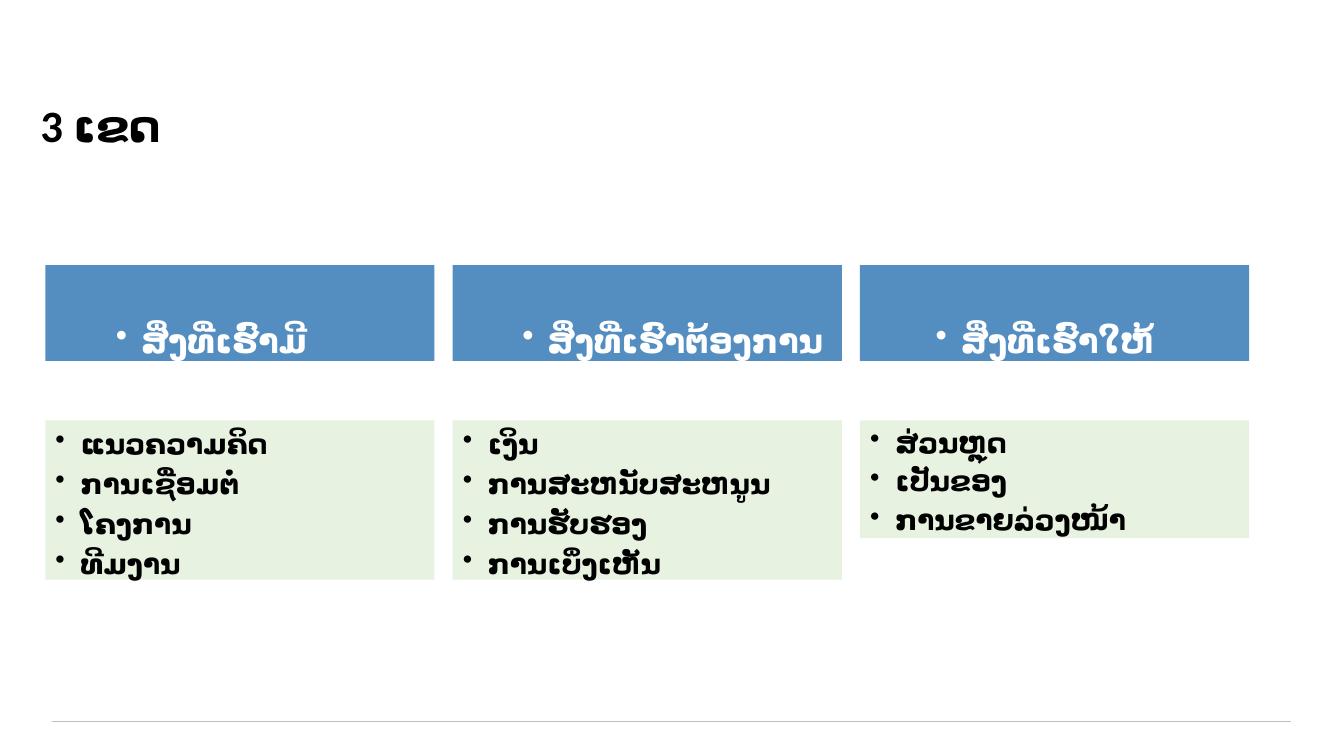
from lxml import etree
from pptx import Presentation, util as u
from pptx.dml.color import RGBColor
from pptx.enum import shapes, text
from pptx.oxml.ns import qn


def paint(fmt, colour):
    """Apply a hex colour to a fill, or to the fill of a line or font."""
    fill = getattr(fmt, "fill", fmt)
    fill.solid()
    fill.fore_color.rgb = RGBColor.from_string(colour)


def write(frame, lines, size=20, colour="000000", font="Calibri", indent=0.01,
          hanging=0, gap=0, inset=0, tracking=0, bullet=None):
    """Fill a text frame with one paragraph for each line."""
    frame.word_wrap = True
    frame.auto_size = text.MSO_AUTO_SIZE.NONE
    frame.vertical_anchor = text.MSO_ANCHOR.TOP
    frame.margin_left = frame.margin_right = frame.margin_bottom = 0
    frame.margin_top = u.Inches(inset)
    for i, line in enumerate(lines):
        para = frame.paragraphs[0] if i == 0 else frame.add_paragraph()
        para.alignment = text.PP_ALIGN.LEFT
        props = para._p.get_or_add_pPr()
        props.set("marL", str(u.Inches(indent)))
        props.set("indent", str(u.Inches(-hanging)))
        if bullet:
            etree.SubElement(props, qn("a:buChar"), char=bullet)
        para.space_before = u.Pt(gap if i else 0)
        run = para.add_run()
        run.text = line
        run.font.name, run.font.size, run.font.bold = font, u.Pt(size), True
        paint(run.font, colour)
        run_props = run._r.get_or_add_rPr()
        run_props.set("spc", str(round(tracking * 100)))
        etree.SubElement(run_props, qn("a:cs"), typeface=font)


class ZoneSlide:
    LEFT, COLUMN, GUTTER = 0.45, 3.86, 0.18
    HEADING, LIST, RULE = "548EC1", "E7F2E0", "BFBFBF"

    def __init__(self, deck):
        self.slide = deck.slides.add_slide(deck.slide_layouts[6])

    def column_left(self, column):
        return self.LEFT + column * (self.COLUMN + self.GUTTER)

    def rule(self, left, right, y):
        line = self.slide.shapes.add_connector(
            shapes.MSO_CONNECTOR.STRAIGHT, *map(u.Inches, (left, y, right, y)))
        paint(line.line, self.RULE)
        line.line.width = u.Pt(0.5)
        etree.SubElement(line._element.spPr, qn("a:effectLst"))

    def title(self, words, left, top, width, height):
        box = self.slide.shapes.add_textbox(
            *map(u.Inches, (left, top, width, height)))
        write(box.text_frame, [words], size=32, inset=0.01)

    def panel(self, column, top, height, fill, lines, **style):
        box = self.slide.shapes.add_shape(
            shapes.MSO_SHAPE.RECTANGLE,
            *map(u.Inches, (self.column_left(column), top, self.COLUMN, height)))
        box.shadow.inherit = False
        paint(box.fill, fill)
        box.line.fill.background()
        write(box.text_frame, lines, hanging=0.25, bullet="•", **style)

    def heading(self, column, words, indent):
        self.panel(column, 2.63, 0.95, self.HEADING, [words], size=24,
                   colour="FFFFFF", indent=indent, inset=0.54, tracking=-0.1)

    def items(self, column, lines, height, **style):
        self.panel(column, 4.17, height, self.LIST, lines, indent=0.35, **style)


# Heading, its indent, items, and the list's height and spacing
ZONES = [
    ("ສິ່ງທີ່ເຮົາມີ", 0.95,
     ["ແນວຄວາມຄິດ", "ການເຊື່ອມຕໍ່", "ໂຄງການ", "ທີມງານ"],
     dict(height=1.58, inset=0.06, gap=4.5)),
    ("ສິ່ງທີ່ເຮົາຕ້ອງການ", 0.94,
     ["ເງິນ", "ການສະຫນັບສະຫນູນ", "ການຮັບຮອງ", "ການເບິ່ງເຫັນ"],
     dict(height=1.58, inset=0.06, gap=4.5, tracking=-0.1)),
    ("ສິ່ງທີ່ເຮົາໃຫ້", 1,
     ["ສ່ວນຫຼຸດ", "ເປັນຂອງ", "ການຂາຍລ່ວງໜ້າ"],
     dict(height=1.17, inset=0.05, gap=3.6, tracking=-0.1)),
]


def main():
    deck = Presentation()
    deck.slide_width, deck.slide_height = u.Inches(13.33), u.Inches(7.5)
    zones = ZoneSlide(deck)

    # Footer rule and title
    zones.rule(0.52, 12.8, 7.16)
    zones.title("3 ເຂດ", 0.39, 0.96, 12.54, 0.55)

    # One heading and one list in each column
    for column, (heading, indent, lines, style) in enumerate(ZONES):
        zones.heading(column, heading, indent)
        zones.items(column, lines, **style)

    deck.save("out.pptx")


if __name__ == "__main__":
    main()
